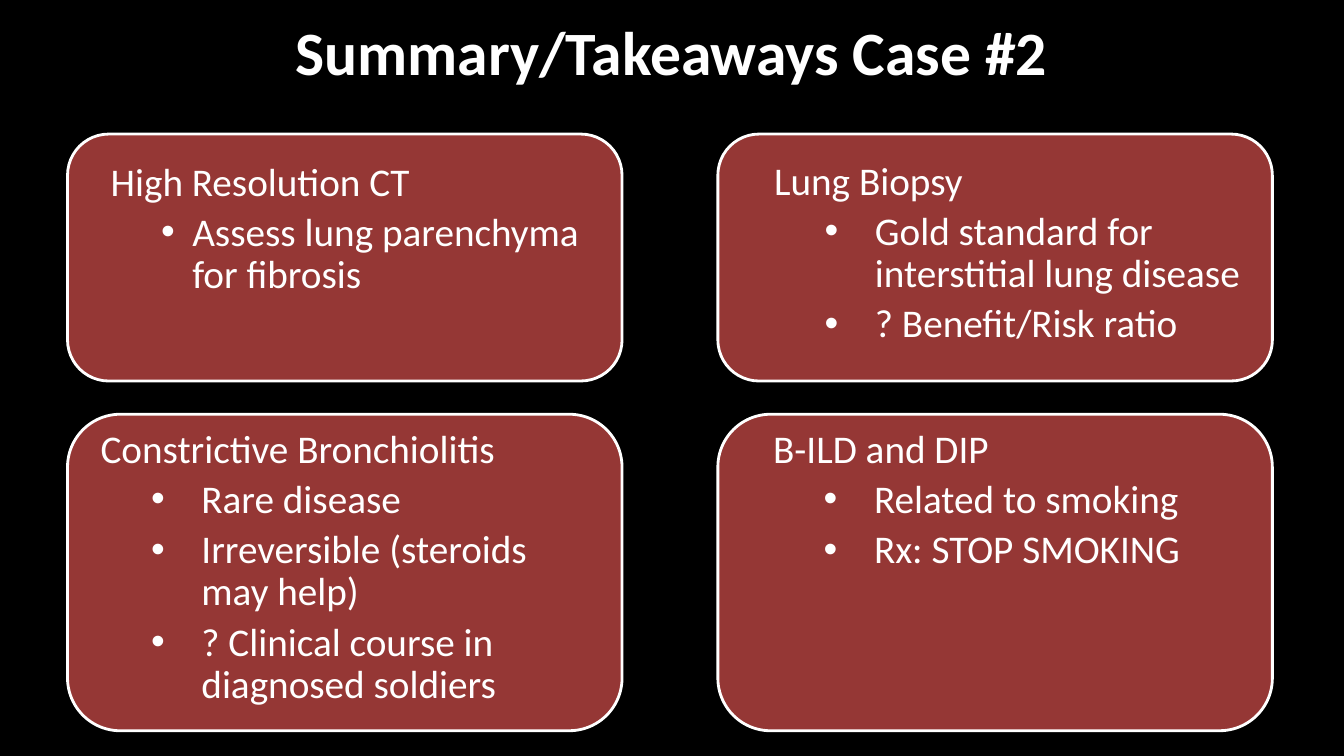
"""Build the Case #2 summary slide with four takeaway cards."""
from pptx import Presentation
from pptx.dml.color import RGBColor
from pptx.enum.shapes import MSO_SHAPE as Shape
from pptx.enum.text import MSO_ANCHOR as Anchor, PP_ALIGN as Align
from pptx.oxml.ns import qn
from pptx.util import Inches, Pt
from lxml import etree

THEME = {
    "background": RGBColor(0, 0, 0),
    "card": RGBColor(0x95, 0x37, 0x35),
    "outline": RGBColor(255, 255, 255),
    "title": {"name": "Calibri", "size": Pt(44), "bold": True},
    "body": {"name": "Calibri", "size": Pt(28)},
    "text": RGBColor(255, 255, 255),
}
COLUMNS = [0.67, 7.12]
ROWS = [(1.33, 2.45), (4.11, 3.14)]
CARD_WIDTH = 5.5
TAKEAWAYS = [
    ("High Resolution CT", ["Assess lung parenchyma for fibrosis"],
     (1, 1.56, 5, 2.08), (0.81, 0.31)),
    ("Lung Biopsy", ["Gold standard for interstitial lung disease", "? Benefit/Risk ratio"],
     (7.58, 1.55, 5.33, 1.99), (1, 0.5)),
    ("Constrictive Bronchiolitis",
     ["Rare disease", "Irreversible (steroids may help)",
      "? Clinical course in diagnosed soldiers"],
     (0.9, 4.21, 5.17, 2.93), (1, 0.5)),
    ("B-ILD and DIP", ["Related to smoking", "Rx: STOP SMOKING"],
     (7.57, 4.21, 4.58, 1.56), (1, 0.5)),
]


def style(paragraph, role):
    for attribute, value in THEME[role].items():
        setattr(paragraph.font, attribute, value)
    paragraph.font.color.rgb = THEME["text"]


def add_bullet(paragraph, margin, hanging):
    properties = paragraph._p.get_or_add_pPr()
    properties.set("marL", str(Inches(margin)))
    properties.set("indent", str(-Inches(hanging)))
    etree.SubElement(properties, qn("a:buFont"), typeface="Arial")
    etree.SubElement(properties, qn("a:buChar"), char="•")


deck = Presentation()
deck.slide_width, deck.slide_height = Inches(13.33), Inches(7.5)
slide = deck.slides.add_slide(deck.slide_layouts[6])
slide.background.fill.solid()
slide.background.fill.fore_color.rgb = THEME["background"]

heading = slide.shapes.add_textbox(0, 0, deck.slide_width, Inches(1)).text_frame
heading.word_wrap = True
heading.vertical_anchor = Anchor.MIDDLE
heading.text = "Summary/Takeaways Case #2"
heading.paragraphs[0].alignment = Align.CENTER
style(heading.paragraphs[0], "title")

for index, (topic, points, text_area, indents) in enumerate(TAKEAWAYS):
    row, column = divmod(index, 2)
    top, height = ROWS[row]
    card_area = COLUMNS[column], top, CARD_WIDTH, height
    card = slide.shapes.add_shape(Shape.ROUNDED_RECTANGLE, *map(Inches, card_area))
    card.shadow.inherit = False
    card.fill.solid()
    card.fill.fore_color.rgb = THEME["card"]
    card.line.color.rgb = THEME["outline"]
    card.line.width = Pt(2)

    summary = slide.shapes.add_textbox(*map(Inches, text_area)).text_frame
    summary.word_wrap = True
    summary.text = topic
    summary.paragraphs[0].line_spacing = 0.9
    style(summary.paragraphs[0], "body")
    for point in points:
        paragraph = summary.add_paragraph()
        paragraph.text = point
        paragraph.level = 1
        add_bullet(paragraph, *indents)
        paragraph.line_spacing = 0.9
        paragraph.space_before = Pt(5.6)
        style(paragraph, "body")

deck.save("out.pptx")
